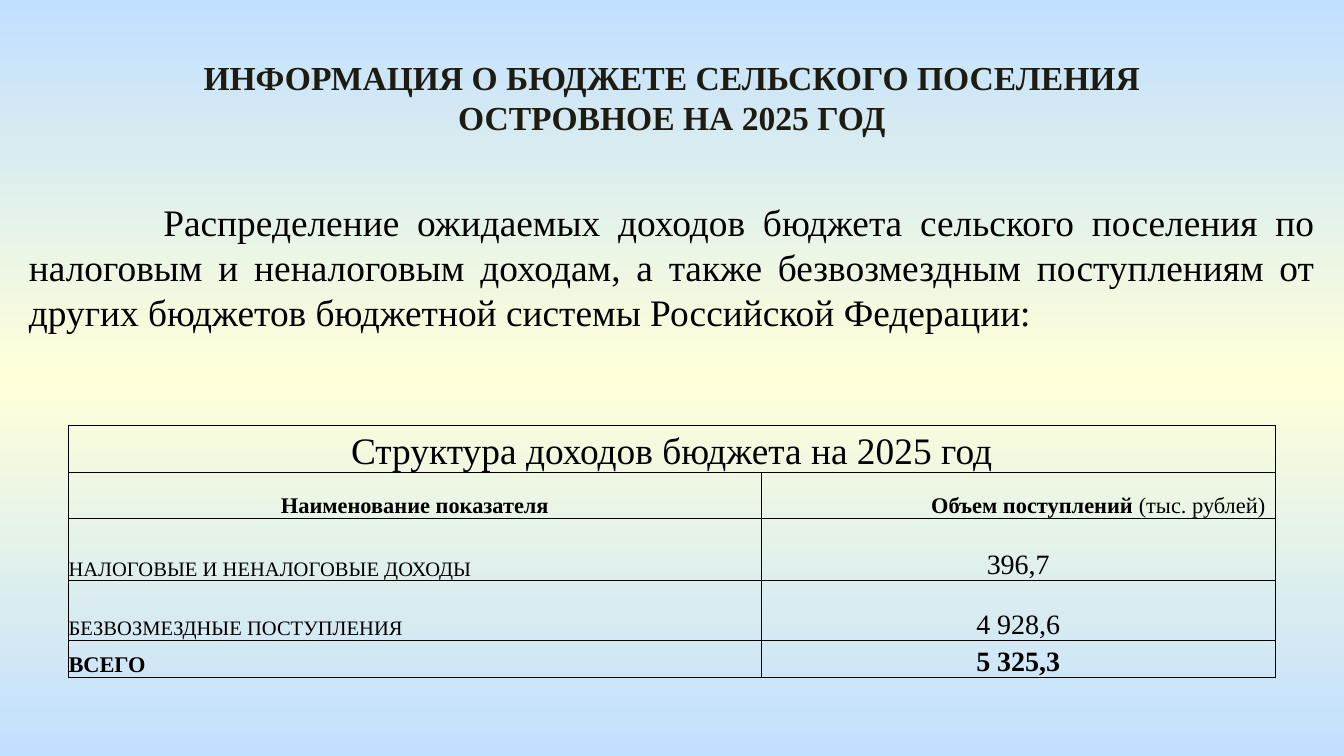
import copy

import pptx
import pptx.dml.color
import pptx.enum.shapes
import pptx.enum.text
import pptx.oxml
import pptx.oxml.ns
import pptx.util

Pt = pptx.util.Pt
ALIGN = pptx.enum.text.PP_ALIGN
ANCHOR = pptx.enum.text.MSO_ANCHOR
qn = pptx.oxml.ns.qn

FONT = "Times New Roman"
COLORS = {"sky": "C1E0FF", "cream": "FFFFD9", "title": "1E1C11", "text": "000000"}

# Each cell: (runs as (text, bold), size, alignment, side margin)
ROWS = [
    (25.2, [([("Структура доходов бюджета на 2025 год", False)], 20, ALIGN.CENTER, 0)]),
    (24.5, [([("Наименование показателя", True)], 12, ALIGN.CENTER, 0),
            ([("Объем поступлений ", True), ("(тыс. рублей)", False)], 12, ALIGN.RIGHT, 5.2)]),
    (33.6, [([("НАЛОГОВЫЕ И НЕНАЛОГОВЫЕ ДОХОДЫ", False)], 11, ALIGN.LEFT, 0),
            ([("396,7", False)], 15, ALIGN.CENTER, 0)]),
    (32, [([("БЕЗВОЗМЕЗДНЫЕ ПОСТУПЛЕНИЯ", False)], 11, ALIGN.LEFT, 0),
          ([("4 928,6", False)], 15, ALIGN.CENTER, 0)]),
    (20, [([("ВСЕГО", True)], 12, ALIGN.LEFT, 0),
          ([("5 325,3", True)], 15, ALIGN.CENTER, 0)]),
]


def rgb(name):
    return pptx.dml.color.RGBColor.from_string(COLORS[name])


def set_font(p, size, color, bold=None):
    p.font.name = FONT
    p.font.size = Pt(size)
    p.font.color.rgb = rgb(color)
    p.font.bold = bold


def paint_background(s):
    fill = s.background.fill
    fill.gradient()
    fill.gradient_angle = 270
    stops = next(s._element.iter(qn("a:gsLst")))
    stops.insert(1, copy.deepcopy(stops[0]))
    for stop, pos, color in zip(fill.gradient_stops, (0, 0.5, 1), ("sky", "cream", "sky")):
        stop.position = pos
        stop.color.rgb = rgb(color)


def add_title(s, x, y, w, h):
    sp = s.shapes.title
    sp.left, sp.top, sp.width, sp.height = Pt(x), Pt(y), Pt(w), Pt(h)
    tf = sp.text_frame
    tf.text = "ИНФОРМАЦИЯ О БЮДЖЕТЕ СЕЛЬСКОГО ПОСЕЛЕНИЯ ОСТРОВНОЕ НА 2025 ГОД"
    tf.word_wrap = True
    tf.auto_size = pptx.enum.text.MSO_AUTO_SIZE.NONE
    tf.vertical_anchor = ANCHOR.TOP
    p = tf.paragraphs[0]
    p.alignment = ALIGN.CENTER
    p.line_spacing = 1.0
    p.space_before = Pt(0)
    set_font(p, 18, "title", True)


def add_intro(s, x, y, w, h):
    """Add the justified paragraph in a rectangle that takes the slide's background as fill."""
    sp = s.shapes.add_shape(pptx.enum.shapes.MSO_SHAPE.RECTANGLE, Pt(x), Pt(y), Pt(w), Pt(h))
    sp.shadow.inherit = False
    sp.line.fill.background()
    sp._element.set("useBgFill", "1")
    tf = sp.text_frame
    tf.word_wrap = True
    tf.vertical_anchor = ANCHOR.MIDDLE
    p = tf.paragraphs[0]
    p.text = ("Распределение ожидаемых доходов бюджета сельского поселения по налоговым "
              "и неналоговым доходам, а также безвозмездным поступлениям от других "
              "бюджетов бюджетной системы Российской Федерации:")
    p.alignment = ALIGN.JUSTIFY
    p._p.get_or_add_pPr().set("indent", str(Pt(72)))
    set_font(p, 20, "text")


def format_cell(cell):
    """Clear the fill and margins, and draw thin lines on all four sides."""
    cell.margin_left = cell.margin_right = cell.margin_top = cell.margin_bottom = 0
    cell.vertical_anchor = ANCHOR.BOTTOM
    cell.fill.background()
    tcPr = cell._tc.get_or_add_tcPr()
    for i, side in enumerate(("lnL", "lnR", "lnT", "lnB")):
        tcPr.insert(i, pptx.oxml.parse_xml(
            f'<a:{side} xmlns:a="http://schemas.openxmlformats.org/drawingml/2006/main" '
            f'w="{Pt(0.5)}"><a:solidFill><a:srgbClr val="{COLORS["text"]}"/></a:solidFill>'
            f'</a:{side}>'))


def add_income_table(s, x, y, col_widths):
    heights = [height for height, _ in ROWS]
    table = s.shapes.add_table(len(ROWS), len(col_widths), Pt(x), Pt(y),
                               Pt(sum(col_widths)), Pt(sum(heights))).table
    table.first_row = table.horz_banding = False
    for column, width in zip(table.columns, col_widths):
        column.width = Pt(width)
    for cell in table.iter_cells():
        format_cell(cell)
    table.cell(0, 0).merge(table.cell(0, 1))
    for i, (height, cells) in enumerate(ROWS):
        table.rows[i].height = Pt(height)
        for j, (runs, size, align, margin) in enumerate(cells):
            cell = table.cell(i, j)
            cell.margin_left = cell.margin_right = Pt(margin)
            p = cell.text_frame.paragraphs[0]
            p.alignment = align
            set_font(p, size, "text")
            for text, bold in runs:
                r = p.add_run()
                r.text = text
                r.font.bold = bold


def main():
    prs = pptx.Presentation()
    prs.slide_width, prs.slide_height = Pt(720), Pt(405)
    s = prs.slides.add_slide(prs.slide_layouts[5])
    paint_background(s)
    add_intro(s, 8.4, 102.8, 703.2, 80)
    add_title(s, 81.7, 26.9, 556.6, 51)
    add_income_table(s, 36.7, 227.8, (371.2, 275.2))
    prs.save("out.pptx")


if __name__ == "__main__":
    main()
